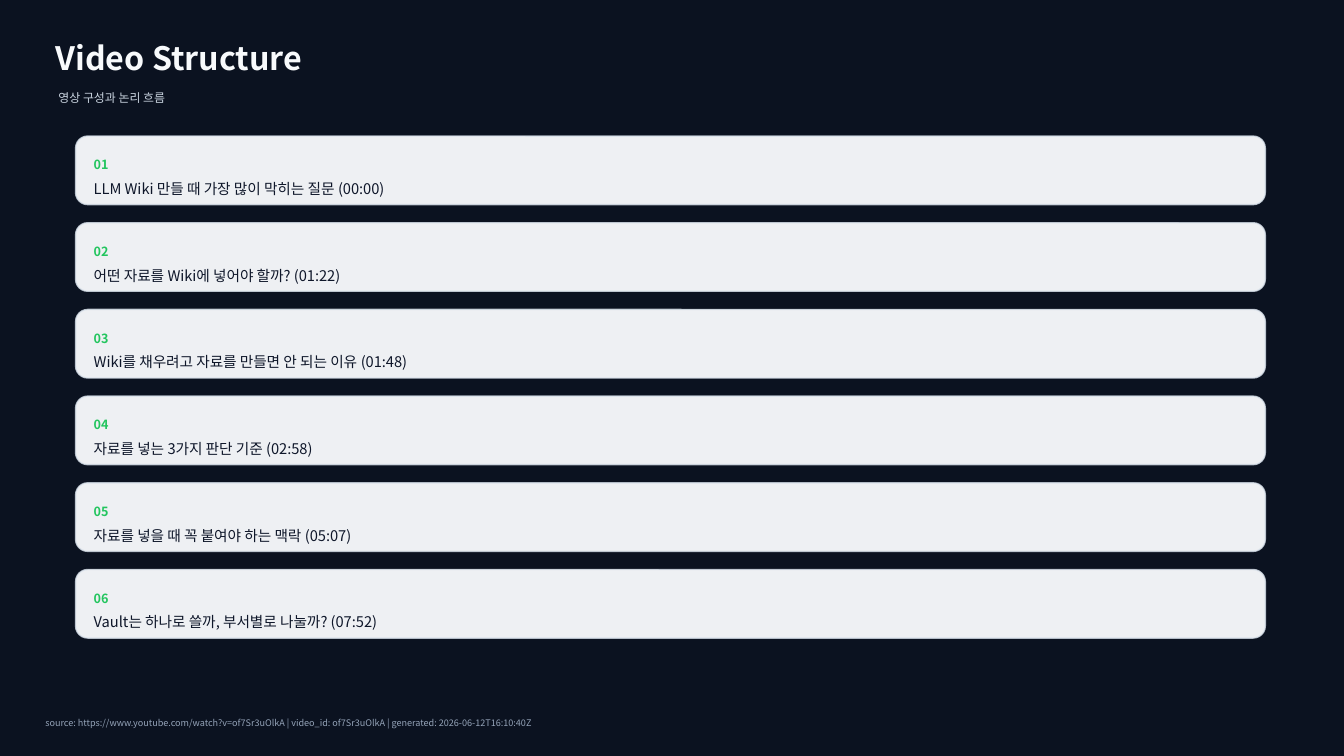
from dataclasses import dataclass

from lxml import etree
from pptx import Presentation
from pptx import util as u
from pptx.dml.color import RGBColor
from pptx.enum import shapes, text
from pptx.oxml.ns import qn
from pptx.slide import Slide

PX = 9144  # EMU per px, 100 px to the inch
FONT = "Noto Sans CJK KR"

NAVY = RGBColor(0x0B, 0x12, 0x20)
WHITE = RGBColor(0xF8, 0xFA, 0xFC)
SILVER = RGBColor(0xCB, 0xD5, 0xE1)
BORDER = RGBColor(0xD7, 0xE0, 0xEA)
GREEN = RGBColor(0x22, 0xC5, 0x5E)
INK = RGBColor(0x0F, 0x17, 0x2A)
SLATE = RGBColor(0x94, 0xA3, 0xB8)

CARD_LEFT, CARD_TOP, CARD_WIDTH, CARD_HEIGHT = 75, 135, 1180, 68
CARD_STEP = 86
CARD_PADDING = 18


@dataclass(frozen=True)
class Style:
    size: float
    color: RGBColor
    bold: bool = False


@dataclass(frozen=True)
class Chapter:
    title: str
    start: str


TITLE = Style(23, WHITE, True)
SUBTITLE = Style(8.5, SILVER)
NUMBER = Style(9, GREEN, True)
CHAPTER = Style(10.5, INK)
SOURCE = Style(6.5, SLATE)

CHAPTERS = [
    Chapter("LLM Wiki 만들 때 가장 많이 막히는 질문", "00:00"),
    Chapter("어떤 자료를 Wiki에 넣어야 할까?", "01:22"),
    Chapter("Wiki를 채우려고 자료를 만들면 안 되는 이유", "01:48"),
    Chapter("자료를 넣는 3가지 판단 기준", "02:58"),
    Chapter("자료를 넣을 때 꼭 붙여야 하는 맥락", "05:07"),
    Chapter("Vault는 하나로 쓸까, 부서별로 나눌까?", "07:52"),
]


def add_label(slide: Slide, words: str, left: int, top: int,
              width: int, height: int, style: Style) -> None:
    label = slide.shapes.add_textbox(left * PX, top * PX, width * PX, height * PX)
    frame = label.text_frame
    frame.word_wrap = True
    frame.vertical_anchor = text.MSO_ANCHOR.MIDDLE
    frame.margin_left = frame.margin_right = 0
    frame.margin_top = frame.margin_bottom = 0
    run = frame.paragraphs[0].add_run()
    run.text = words
    run.font.size = u.Pt(style.size)
    run.font.bold = style.bold
    run.font.color.rgb = style.color
    run.font.name = FONT
    # Hangul takes its typeface from the East Asian font
    etree.SubElement(run.font._element, qn("a:ea"), typeface=FONT)


def set_opacity(color_parent: etree._Element, percent: int) -> None:
    color = color_parent.find(".//" + qn("a:srgbClr"))
    etree.SubElement(color, qn("a:alpha"), val=str(percent * 1000))


def add_card(slide: Slide, top: int) -> None:
    card = slide.shapes.add_shape(
        shapes.MSO_SHAPE.ROUNDED_RECTANGLE,
        CARD_LEFT * PX, top * PX, CARD_WIDTH * PX, CARD_HEIGHT * PX)
    card.adjustments[0] = 0.176
    card.shadow.inherit = False
    card.fill.solid()
    card.fill.fore_color.rgb = WHITE
    card.line.color.rgb = BORDER
    card.line.width = u.Pt(1)
    properties = card._element.spPr
    set_opacity(properties.find(qn("a:solidFill")), 96)
    set_opacity(properties.find(qn("a:ln")), 80)


def add_chapter(slide: Slide, index: int, chapter: Chapter) -> None:
    top = CARD_TOP + index * CARD_STEP
    left = CARD_LEFT + CARD_PADDING
    width = CARD_WIDTH - 2 * CARD_PADDING
    add_card(slide, top)
    add_label(slide, f"{index + 1:02}", left, top + 16, width, 25, NUMBER)
    add_label(slide, f"{chapter.title} ({chapter.start})",
              left, top + 50, width, 4, CHAPTER)


def main() -> None:
    deck = Presentation()
    deck.slide_width, deck.slide_height = 1333 * PX, 750 * PX
    slide = deck.slides.add_slide(deck.slide_layouts[6])
    slide.background.fill.solid()
    slide.background.fill.fore_color.rgb = NAVY

    # Heading
    add_label(slide, "Video Structure", 55, 35, 1200, 45, TITLE)
    add_label(slide, "영상 구성과 논리 흐름", 58, 83, 1150, 28, SUBTITLE)

    # Chapter cards
    for index, chapter in enumerate(CHAPTERS):
        add_chapter(slide, index, chapter)

    # Source line
    add_label(slide,
              "source: https://www.youtube.com/watch?v=of7Sr3uOlkA"
              " | video_id: of7Sr3uOlkA | generated: 2026-06-12T16:10:40Z",
              45, 705, 1240, 25, SOURCE)

    deck.save("out.pptx")


if __name__ == "__main__":
    main()
